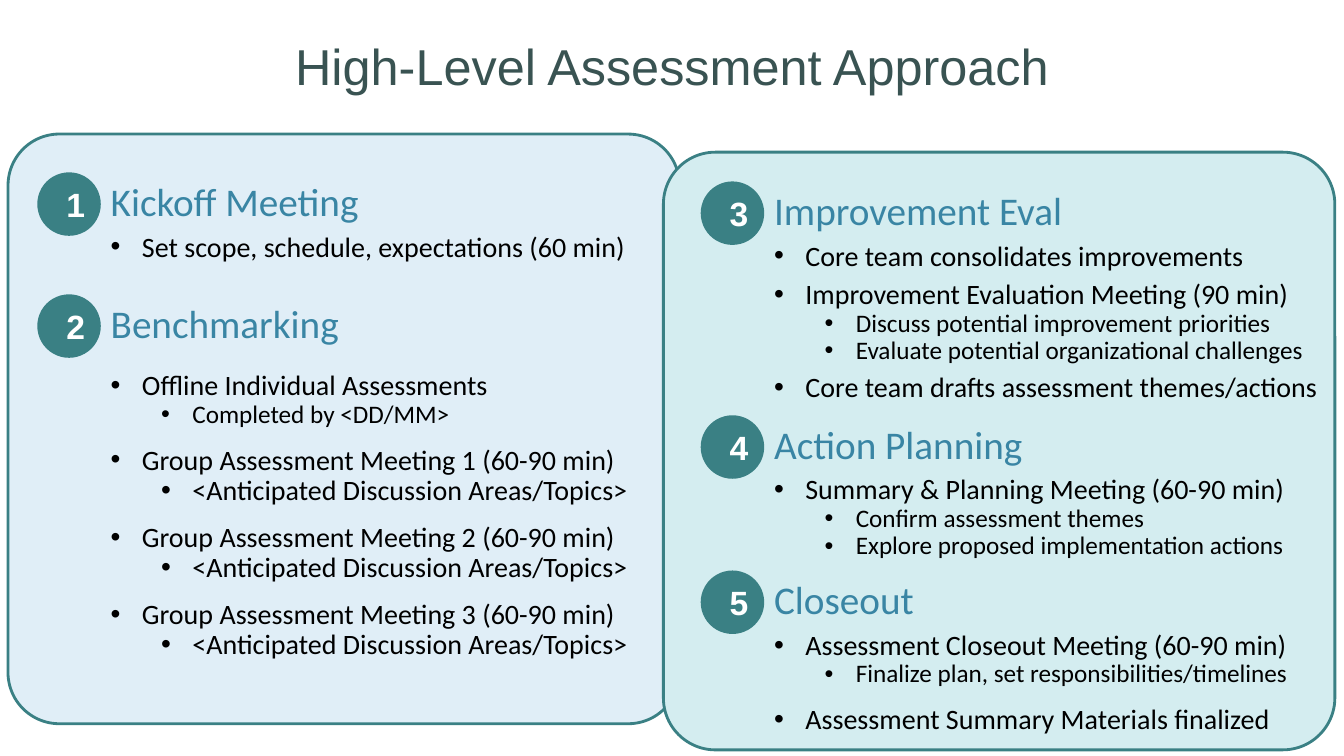
from pptx import Presentation
from pptx import util as u
from pptx.dml.color import RGBColor
from pptx.enum import shapes, text
from lxml import etree

SLIDE_W, SLIDE_H = 13.33, 7.5
BADGE = 0.63
STEP_W = 5.67
INDENT = 0.31
COLOURS = {
    "title": "395352", "heading": "3985A4", "body": "000000", "badge": "3A8084",
    "badge_text": "FFFFFF", "left": "E0EEF7", "right": "D4EDF0",
}
TOPICS = "<Anticipated Discussion Areas/Topics>"

# Each bullet: level, wording, size, space before, space after
KICKOFF = [(0, "Set scope, schedule, expectations (60 min)", 20, 0, 6)]
BENCHMARKING = [
    (0, "Offline Individual Assessments", 20, 12, 0),
    (1, "Completed by <DD/MM>", 18, 0, 0),
]
for meeting in (1, 2, 3):
    BENCHMARKING += [
        (0, f"Group Assessment Meeting {meeting} (60-90 min)", 20, 12, 0),
        (1, TOPICS, 20, 0, 0),
    ]
IMPROVEMENT = [
    (0, "Core team consolidates improvements", 20, 0, 6),
    (0, "Improvement Evaluation Meeting (90 min)", 20, 0, 0),
    (1, "Discuss potential improvement priorities", 18, 0, 0),
    (1, "Evaluate potential organizational challenges", 18, 0, 0),
    (0, "Core team drafts assessment themes/actions", 20, 6, 0),
]
PLANNING = [
    (0, "Summary & Planning Meeting (60-90 min)", 20, 0, 0),
    (1, "Confirm assessment themes", 18, 0, 0),
    (1, "Explore proposed implementation actions", 18, 0, 0),
]
CLOSEOUT = [
    (0, "Assessment Closeout Meeting (60-90 min)", 20, 0, 0),
    (1, "Finalize plan, set responsibilities/timelines", 18, 0, 0),
    (0, "Assessment Summary Materials finalized", 20, 12, 0),
]

# Each panel: fill, box, badge offset, steps (offset from panel top, height, heading, bullets)
PANELS = [
    ("left", (0.08, 1.33, 6.66, 5.85), 0.29, [
        (0.38, 1.21, "Kickoff Meeting", KICKOFF),
        (1.59, 4.58, "Benchmarking", BENCHMARKING),
    ]),
    ("right", (6.58, 1.51, 6.66, 5.93), 0.37, [
        (0.29, 1.21, "Improvement Eval", IMPROVEMENT),
        (2.61, 1.21, "Action Planning", PLANNING),
        (4.15, 1.21, "Closeout", CLOSEOUT),
    ]),
]


def inches(*lengths):
    return [u.Inches(length) for length in lengths]


def rgb(name):
    return RGBColor.from_string(COLOURS[name])


def write(paragraph, wording, size, font, colour, bold=False, **spacing):
    run = paragraph.add_run()
    run.text = wording
    for key, value in {"size": u.Pt(size), "name": font, "bold": bold}.items():
        setattr(run.font, key, value)
    run.font.color.rgb = rgb(colour)
    for key, value in spacing.items():
        setattr(paragraph, key, value)


def set_insets(frame, inset):
    for side in ("left", "top", "right", "bottom"):
        setattr(frame, f"margin_{side}", u.Inches(inset))


def add_bullet(paragraph, level):
    paragraph.level = level
    props = paragraph._p.get_or_add_pPr()
    props.set("marL", str(u.Inches(INDENT + 0.5 * level)))
    props.set("indent", str(-u.Inches(INDENT)))
    namespace = props.nsmap["a"]
    font = etree.SubElement(props, f"{{{namespace}}}buFont")
    font.set("typeface", "Arial")
    mark = etree.SubElement(props, f"{{{namespace}}}buChar")
    mark.set("char", "•")


def add_filled(slide, kind, box, fill):
    shape = slide.shapes.add_shape(kind, *inches(*box))
    shape.shadow.inherit = False
    shape.fill.solid()
    shape.fill.fore_color.rgb = rgb(fill)
    return shape


def add_title(slide, wording):
    title = slide.shapes.title
    title.left, title.top, title.width, title.height = inches(0, 0.15, SLIDE_W, 1)
    frame = title.text_frame
    set_insets(frame, 0)
    frame.vertical_anchor = text.MSO_ANCHOR.MIDDLE
    write(frame.paragraphs[0], wording, 36, "Arial", "title",
          alignment=text.PP_ALIGN.CENTER)


def add_badge(slide, left, top, number):
    badge = add_filled(slide, shapes.MSO_SHAPE.OVAL, (left, top, BADGE, BADGE), "badge")
    badge.line.fill.background()
    frame = badge.text_frame
    set_insets(frame, 0.25)
    frame.vertical_anchor = text.MSO_ANCHOR.MIDDLE
    write(frame.paragraphs[0], str(number), 24, "Arial", "badge_text", bold=True,
          alignment=text.PP_ALIGN.CENTER)


def add_step(slide, left, top, height, number, heading, bullets):
    """Numbered badge with its heading and bullets to the right."""
    box = slide.shapes.add_textbox(*inches(left + BADGE, top, STEP_W, height))
    frame = box.text_frame
    frame.word_wrap = True
    write(frame.paragraphs[0], heading, 28, "Calibri", "heading",
          space_before=u.Pt(12), space_after=u.Pt(6))
    for level, wording, size, before, after in bullets:
        paragraph = frame.add_paragraph()
        write(paragraph, wording, size, "Calibri", "body", line_spacing=0.9,
              space_before=u.Pt(before), space_after=u.Pt(after))
        add_bullet(paragraph, level)
    add_badge(slide, left, top, number)


def add_panel(slide, box, fill):
    panel = add_filled(slide, shapes.MSO_SHAPE.ROUNDED_RECTANGLE, box, fill)
    panel.adjustments[0] = 0.087
    panel.line.color.rgb = rgb("badge")
    panel.line.width = u.Pt(2)


def main():
    deck = Presentation()
    deck.slide_width, deck.slide_height = inches(SLIDE_W, SLIDE_H)
    slide = deck.slides.add_slide(deck.slide_layouts[5])
    add_title(slide, "High-Level Assessment Approach")
    for fill, box, _, _ in PANELS:
        add_panel(slide, box, fill)
    number = 0
    for _, (left, top, _, _), badge_offset, steps in PANELS:
        for offset, height, heading, bullets in steps:
            number += 1
            add_step(slide, left + badge_offset, top + offset, height,
                     number, heading, bullets)
    deck.save("out.pptx")


if __name__ == "__main__":
    main()
